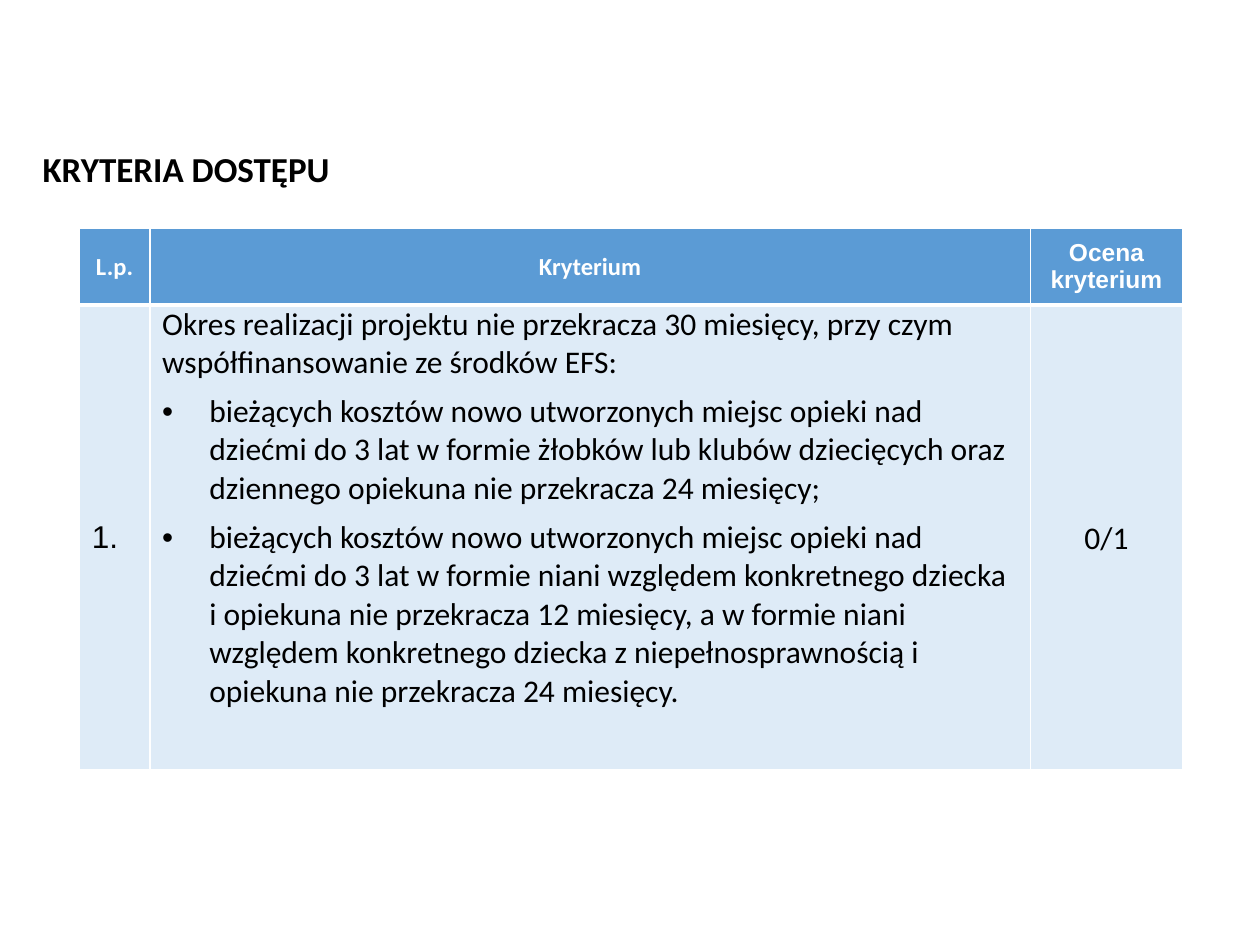
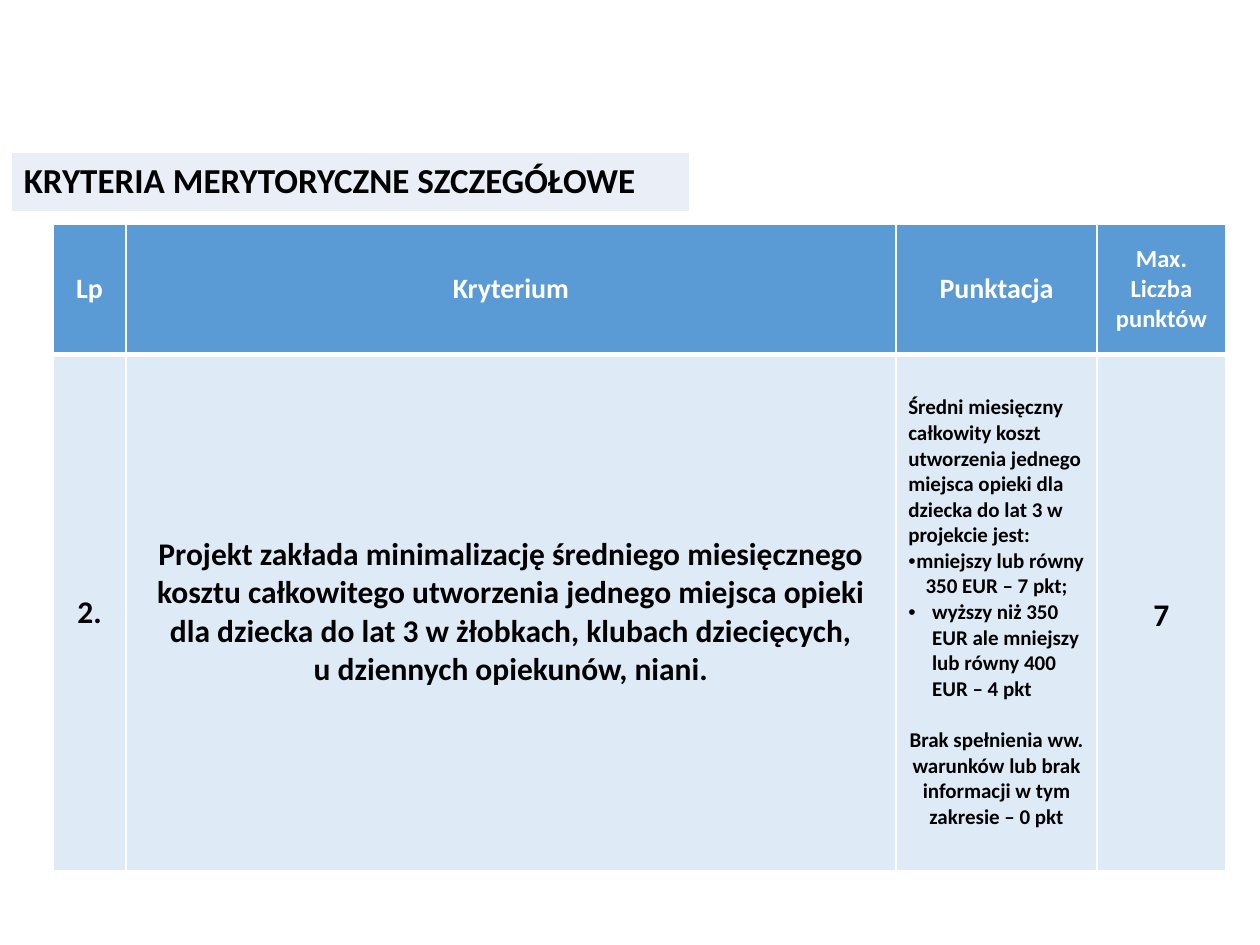
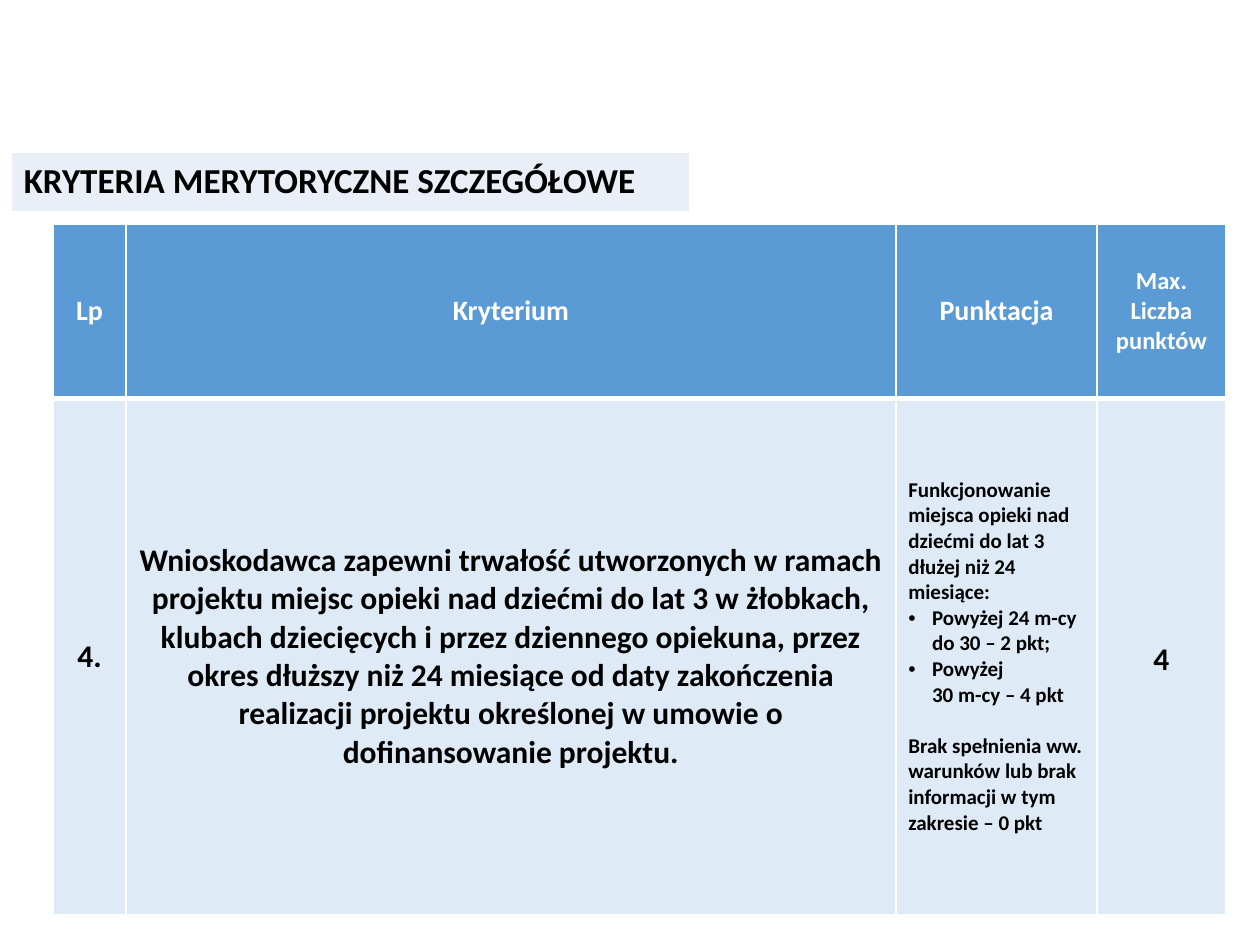
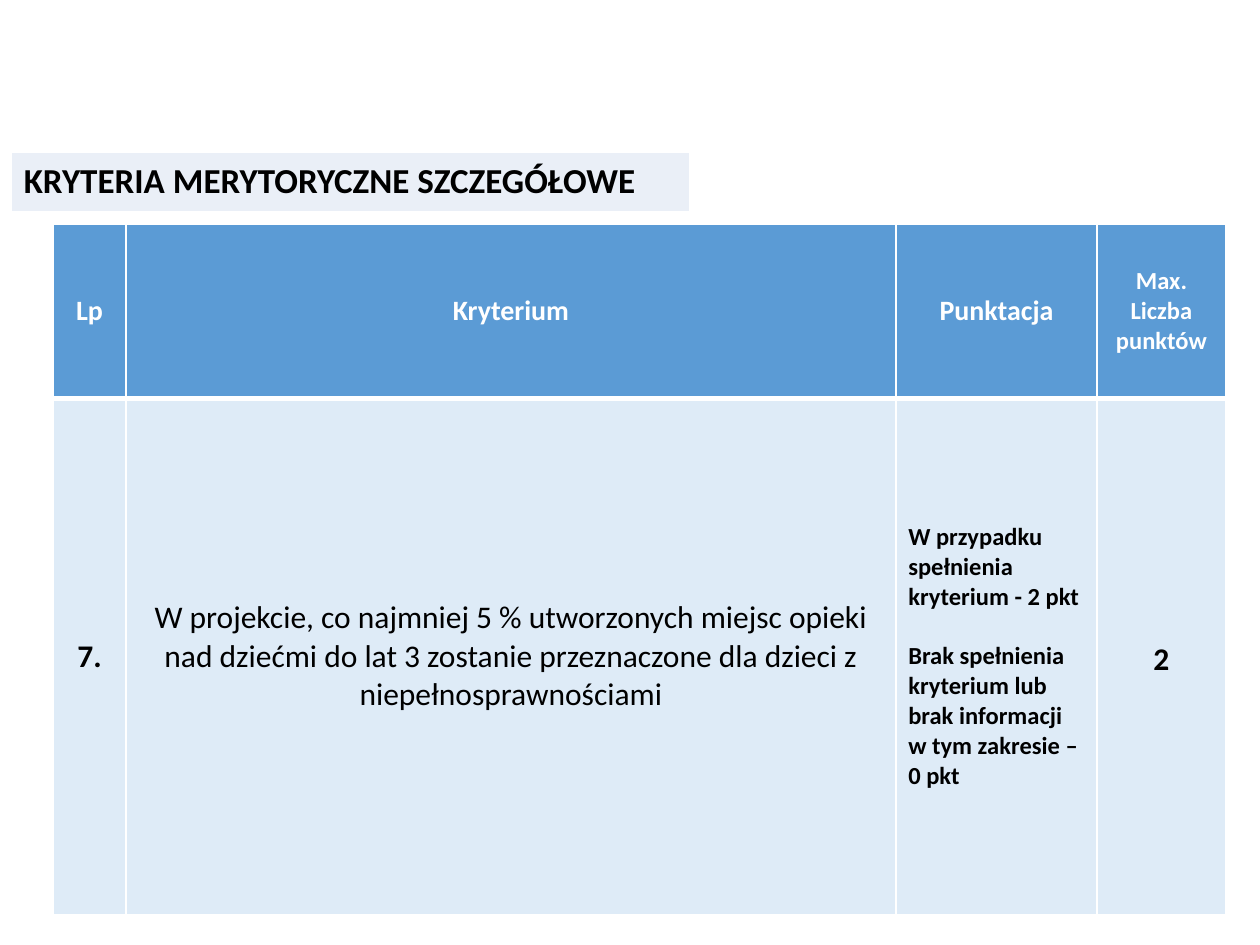
from dataclasses import dataclass
from pptx import Presentation
from pptx.dml.color import RGBColor
from pptx.enum.text import MSO_ANCHOR, PP_ALIGN
from pptx.oxml.ns import qn
from pptx.util import Cm, Pt
from lxml.etree import SubElement

COLORS = {
    "header": "5B9BD5",
    "body": "DEEBF7",
    "title": "EAEFF7",
    "white": "FFFFFF",
    "black": "000000",
}
FONT = "Calibri"
LEFT, CENTER = PP_ALIGN.LEFT, PP_ALIGN.CENTER


@dataclass
class Box:
    left: float
    top: float
    width: float = 0
    height: float = 0


@dataclass
class Line:
    """One paragraph; a newline in the text is a soft line break."""
    text: str
    size: float = 18
    bold: bool = True
    align: int = CENTER
    color: str = "black"
    font: str = FONT
    bullet: bool = False
    indent: float = 0
    before: float = 0
    after: float = 0
    spacing: float = 1


@dataclass
class CellText:
    lines: list
    margins: tuple = (0.25, 0)
    anchor: int = MSO_ANCHOR.MIDDLE


# Text
def write_line(paragraph, line):
    properties = paragraph._p.get_or_add_pPr()
    if line.bullet:
        SubElement(properties, qn("a:buFont"), typeface="Arial")
        SubElement(properties, qn("a:buChar"), char="•")
    if line.indent:
        properties.set("marL", str(Cm(line.indent)))
        properties.set("indent", str(-Cm(line.indent)))
    paragraph.alignment = line.align
    paragraph.space_before = Pt(line.before)
    paragraph.space_after = Pt(line.after)
    paragraph.line_spacing = line.spacing
    for number, part in enumerate(line.text.split("\n")):
        if number:
            paragraph.add_line_break()
        run = paragraph.add_run()
        run.text = part
        run.font.name = line.font
        run.font.size = Pt(line.size)
        run.font.bold = line.bold
        run.font.color.rgb = RGBColor.from_string(COLORS[line.color])


def write_lines(text_frame, lines):
    for number, line in enumerate(lines):
        paragraph = text_frame.add_paragraph() if number else text_frame.paragraphs[0]
        write_line(paragraph, line)


# Tables
def draw_borders(cell, widths):
    properties = cell._tc.get_or_add_tcPr()
    for side, width in widths.items():
        border = SubElement(properties, qn(f"a:ln{side}"), w=str(Pt(width)))
        fill = SubElement(border, qn("a:solidFill"))
        SubElement(fill, qn("a:srgbClr"), val=COLORS["white"])


def fill_cell(cell, content, color, borders):
    draw_borders(cell, borders)
    cell.fill.solid()
    cell.fill.fore_color.rgb = RGBColor.from_string(COLORS[color])
    cell.vertical_anchor = content.anchor
    horizontal, vertical = content.margins
    cell.margin_left = cell.margin_right = Cm(horizontal)
    cell.margin_top = cell.margin_bottom = Cm(vertical)
    write_lines(cell.text_frame, content.lines)


def add_grid(slide, box, columns, rows):
    frame = slide.shapes.add_table(len(rows), len(columns), Cm(box.left), Cm(box.top),
                                   Cm(sum(columns)), Cm(sum(rows)))
    table = frame.table
    table.horz_banding = False
    for column, width in zip(table.columns, columns):
        column.width = Cm(width)
    for row, height in zip(table.rows, rows):
        row.height = Cm(height)
    return table


def add_criteria_table(slide, box, columns, rows, header, body):
    table = add_grid(slide, box, columns, rows)
    for index, (heading, content) in enumerate(zip(header, body)):
        fill_cell(table.cell(0, index), heading, "header", {"L": 1, "R": 1, "T": 1, "B": 3})
        fill_cell(table.cell(1, index), content, "body", {"L": 1, "R": 1, "B": 1})


def heading(*texts, size=16, font=FONT):
    lines = [Line(text, size, color="white", font=font) for text in texts]
    return CellText(lines, margins=(0.25, 0.13))


# Titles
def add_plain_title(slide, box, text):
    shape = slide.shapes.add_textbox(Cm(box.left), Cm(box.top), Cm(box.width), Cm(box.height))
    shape.text_frame.word_wrap = True
    shape.text_frame.vertical_anchor = MSO_ANCHOR.MIDDLE
    write_lines(shape.text_frame, [Line(text, 20, align=LEFT)])


def add_title_band(slide, box, text):
    table = add_grid(slide, box, [box.width], [box.height])
    table.first_row = False
    fill_cell(table.cell(0, 0), CellText([Line(text, 20, align=LEFT)]), "title",
              {"L": 1, "R": 1, "T": 1, "B": 1})


# Slide types
def add_access_slide(presentation):
    slide = presentation.slides.add_slide(presentation.slide_layouts[6])
    header = [heading("L.p.", size=14), heading("Kryterium", size=14),
              heading("Ocena kryterium", size=14, font="Arial")]
    plain = {"bold": False, "align": LEFT}
    item = {**plain, "bullet": True, "indent": 0.95, "after": 6}
    conditions = [
        Line("Okres realizacji projektu nie przekracza 30 miesięcy, przy czym "
             "współfinansowanie ze środków EFS:", after=6, **plain),
        Line("bieżących kosztów nowo utworzonych miejsc opieki nad dziećmi do 3 lat "
             "w formie żłobków lub klubów dziecięcych oraz dziennego opiekuna "
             "nie przekracza 24 miesięcy;", **item),
        Line("bieżących kosztów nowo utworzonych miejsc opieki nad dziećmi do 3 lat "
             "w formie niani względem konkretnego dziecka i opiekuna nie przekracza "
             "12 miesięcy, a w formie niani względem konkretnego dziecka "
             "z niepełnosprawnością i opiekuna nie przekracza 24 miesięcy.", **item),
    ]
    body = [
        CellText([Line("1.", font="Arial", **plain)], margins=(0.25, 0.13)),
        CellText(conditions, anchor=MSO_ANCHOR.TOP),
        CellText([Line("0/1", bold=False, spacing=1.07)], margins=(0.1, 0.1)),
    ]
    add_criteria_table(slide, Box(1.6, 4.6), [1.42, 17.75, 3.07], [1.55, 9.37], header, body)
    add_plain_title(slide, Box(0.61, 2.84, 9.4, 1.12), "KRYTERIA DOSTĘPU")


def add_scoring_slide(presentation, number, criterion, scoring, points, header_height=3.51):
    slide = presentation.slides.add_slide(presentation.slide_layouts[6])
    header = [heading("Lp"), heading("Kryterium"), heading("Punktacja"),
              heading("Max.", "Liczba punktów", size=14)]
    body = [
        CellText([Line(number)], margins=(0.25, 0.13)),
        CellText([criterion], margins=(0.18, 0)),
        CellText(scoring),
        CellText([Line(points, spacing=1.15)]),
    ]
    add_criteria_table(slide, Box(1.07, 4.52), [1.47, 15.52, 4.06, 2.59],
                       [header_height, 10.41], header, body)
    add_title_band(slide, Box(0.23, 3.07, 13.67, 1.19), "KRYTERIA MERYTORYCZNE SZCZEGÓŁOWE")


def main():
    presentation = Presentation()
    presentation.slide_width, presentation.slide_height = Cm(25.4), Cm(19.05)
    bullet = {"size": 12, "align": LEFT, "bullet": True, "indent": 0.48}
    no_points = "Brak spełnienia ww. warunków lub brak informacji w tym zakresie – 0 pkt"

    add_access_slide(presentation)
    add_scoring_slide(
        presentation, "2.",
        Line("Projekt zakłada minimalizację średniego miesięcznego kosztu całkowitego "
             "utworzenia jednego miejsca opieki dla dziecka do lat 3 w żłobkach, "
             "klubach dziecięcych,\nu dziennych opiekunów, niani."),
        [Line("Średni miesięczny całkowity koszt utworzenia jednego miejsca opieki "
              "dla dziecka do lat 3 w projekcie jest:", 12, align=LEFT),
         Line("mniejszy lub równy 350 EUR – 7 pkt;", 12, bullet=True),
         Line("wyższy niż 350 EUR ale mniejszy lub równy 400 EUR – 4 pkt", **bullet),
         Line(no_points, 12, before=14.6)],
        "7", header_height=2.62)
    add_scoring_slide(
        presentation, "4.",
        Line("Wnioskodawca zapewni trwałość utworzonych w ramach projektu miejsc opieki "
             "nad dziećmi do lat 3 w żłobkach, klubach dziecięcych i przez dziennego "
             "opiekuna, przez okres dłuższy niż 24 miesiące od daty zakończenia "
             "realizacji projektu określonej w umowie o dofinansowanie projektu."),
        [Line("Funkcjonowanie miejsca opieki nad dziećmi do lat 3 dłużej niż "
              "24 miesiące:", 12, align=LEFT),
         Line("Powyżej 24 m-cy do 30 – 2 pkt;", **bullet),
         Line("Powyżej\n30 m-cy – 4 pkt", **bullet),
         Line(no_points, 12, align=LEFT, before=14.6)],
        "4")
    add_scoring_slide(
        presentation, "7.",
        Line("W projekcie, co najmniej 5 % utworzonych miejsc opieki nad dziećmi do lat 3 "
             "zostanie przeznaczone dla dzieci z niepełnosprawnościami", bold=False),
        [Line("W przypadku spełnienia kryterium - 2 pkt", 14, align=LEFT),
         Line("Brak spełnienia kryterium lub brak informacji w tym zakresie – 0 pkt",
              14, align=LEFT, before=17)],
        "2")
    presentation.save("out.pptx")


if __name__ == "__main__":
    main()
